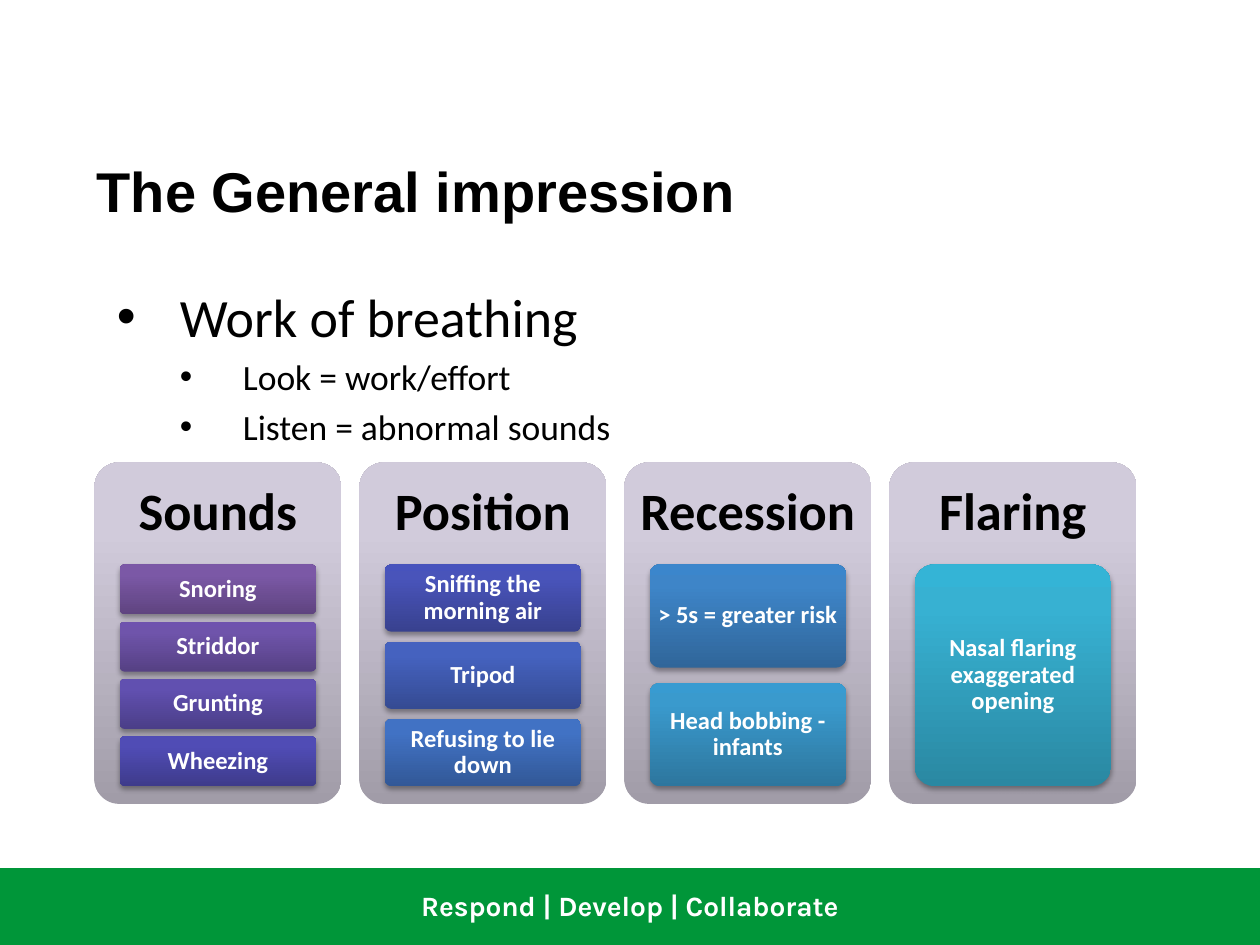
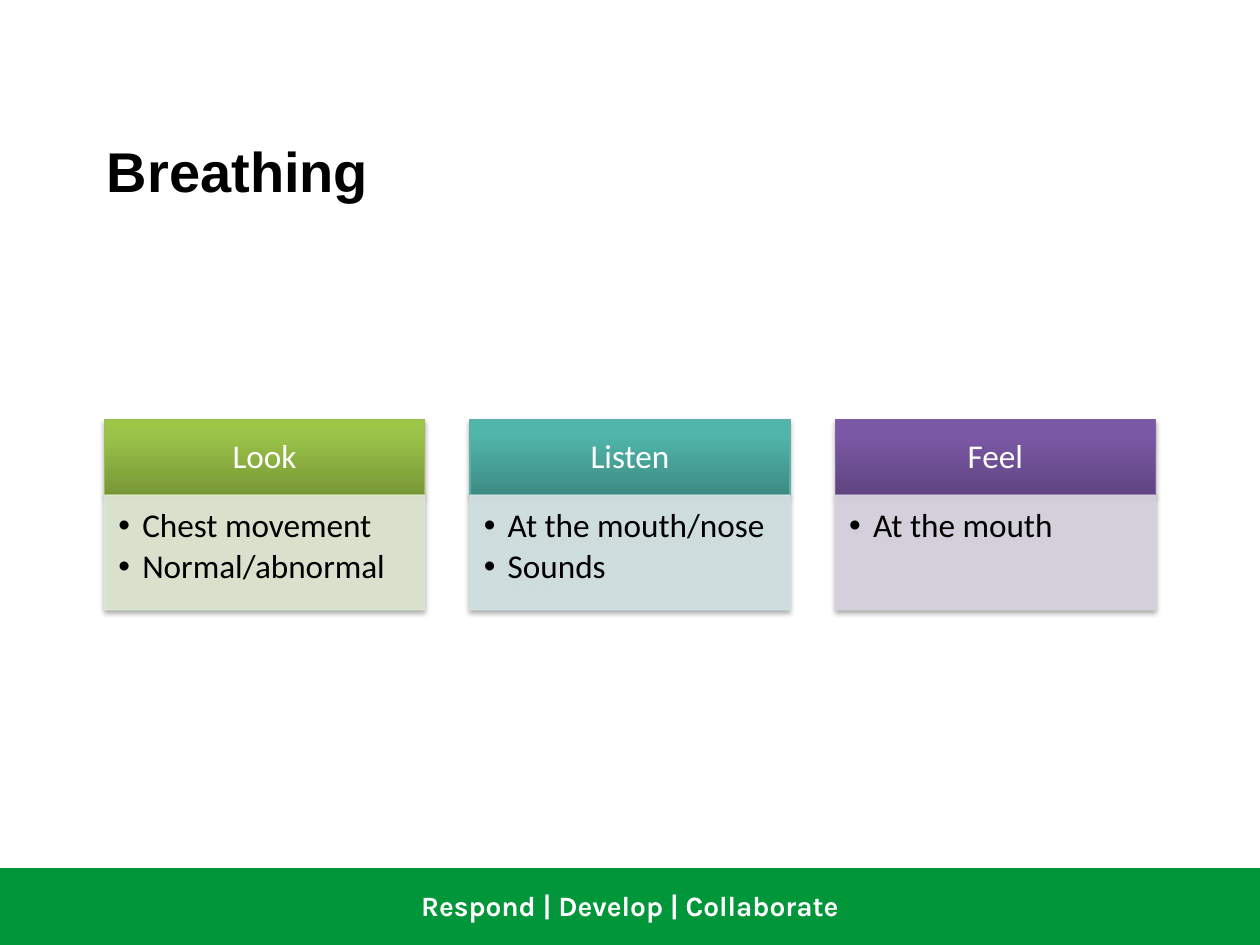
from dataclasses import dataclass
from lxml.etree import SubElement
from pptx import Presentation
from pptx.dml.color import RGBColor
from pptx.enum.shapes import MSO_SHAPE
from pptx.enum.text import MSO_ANCHOR, PP_ALIGN
from pptx.oxml.ns import qn
from pptx.util import Inches, Pt


@dataclass(frozen=True)
class Theme:
    black: str = "000000"
    white: str = "FFFFFF"
    green: str = "009639"
    card: tuple = ("A19CA8", "D1CBDB", "D2CBDC")
    title_font: str = "Arial"
    body_font: str = "Calibri"
    footer_font: str = "Karla"
    title_size: float = 32
    point_size: float = 30.8
    subpoint_size: float = 20.3
    card_size: float = 30
    tile_size: float = 14
    panel_size: float = 19
    footer_size: float = 16


THEME = Theme()

# Content
FOOTER = "Respond | Develop | Collaborate"
IMPRESSION = "The General impression"
POINTS = [
    (0, "Work of breathing"),
    (1, "Look = work/effort"),
    (1, "Listen = abnormal sounds"),
]
# Each card: heading, then its tiles with their colours from bottom to top
CARDS = [
    ("Sounds", [
        ("Snoring", ("5F4480", "7B58A6", "7C57A8")),
        ("Striddor", ("564184", "6F54AB", "6F53AE")),
        ("Grunting", ("4B3E88", "6150B0", "604FB3")),
        ("Wheezing", ("3E3B8B", "504CB5", "4F4BB8")),
    ]),
    ("Position", [
        ("Sniffing the morning air", ("38418F", "4954BA", "4753BD")),
        ("Tripod", ("354B93", "4562BF", "4361C2")),
        ("Refusing to lie down", ("325897", "4172C4", "3F72C7")),
    ]),
    ("Recession", [
        ("> 5s = greater risk", ("30669A", "3E85C8", "3B86CC")),
        ("Head bobbing - infants", ("2D769E", "3A9ACD", "389BD1")),
    ]),
    ("Flaring", [
        ("Nasal flaring exaggerated opening", ("2A88A2", "37B1D2", "34B4D6")),
    ]),
]
BREATHING = "Breathing"
# Each panel: heading, heading colours, heading edge, body colour, findings
PANELS = [
    ("Look", ("779737", "9BC348", "9DC746"), "9BBB59", "DEE7D1",
     ["Chest movement", "Normal/abnormal"]),
    ("Listen", ("3D8B83", "50B5AA", "4EB8AC"), "5EAFA6", "D2E3E2",
     ["At the mouth/nose", "Sounds"]),
    ("Feel", ("5F4480", "7B58A6", "7C57A8"), "8064A2", "D8D3E0",
     ["At the mouth"]),
]


def rgb(value):
    return RGBColor.from_string(value)


def add_box(slide, area, fill, kind=MSO_SHAPE.RECTANGLE, edge=None,
            edge_width=0.75, alpha=None, shadow=False):
    """Preset shape; a tuple as fill is a gradient from bottom to top."""
    box = slide.shapes.add_shape(kind, *map(Inches, area))
    if kind == MSO_SHAPE.ROUNDED_RECTANGLE:
        box.adjustments[0] = 0.1
    properties = box._element.spPr
    if isinstance(fill, tuple):
        box.fill.gradient()
        box.fill.gradient_angle = 90
        stops = next(properties.iter(qn("a:gsLst")))
        for stop in list(stops):
            stops.remove(stop)
        for position, color in zip((0, 80, 100), fill):
            stop = SubElement(stops, qn("a:gs"), pos=str(position * 1000))
            SubElement(stop, qn("a:srgbClr"), val=color)
    else:
        box.fill.solid()
        box.fill.fore_color.rgb = rgb(fill)
    if edge:
        box.line.color.rgb = rgb(edge)
        box.line.width = Pt(edge_width)
    else:
        box.line.fill.background()
    if alpha:
        for color in list(properties.iter(qn("a:srgbClr"))):
            SubElement(color, qn("a:alpha"), val=str(alpha * 1000))
    box.shadow.inherit = False
    if shadow:
        outer = SubElement(properties.find(qn("a:effectLst")), qn("a:outerShdw"),
                           blurRad=str(Pt(3.1)), dist=str(Pt(1.8)),
                           dir="5400000", rotWithShape="0")
        color = SubElement(outer, qn("a:srgbClr"), val=THEME.black)
        SubElement(color, qn("a:alpha"), val="35000")
    return box


def add_text_area(slide, area):
    return slide.shapes.add_textbox(*map(Inches, area))


def write(holder, lines, size, color=THEME.black, font=THEME.body_font, bold=False,
          align=PP_ALIGN.LEFT, anchor=MSO_ANCHOR.TOP,
          insets=(0.1, 0.05, 0.1, 0.05), spacing=None):
    """Fill a shape with one paragraph a line and return the paragraphs."""
    frame = holder.text_frame
    frame.word_wrap = True
    frame.vertical_anchor = anchor
    (frame.margin_left, frame.margin_top,
     frame.margin_right, frame.margin_bottom) = map(Inches, insets)
    frame.text = "\n".join(lines)
    for paragraph in frame.paragraphs:
        paragraph.alignment = align
        paragraph.line_spacing = spacing
        for run in paragraph.runs:
            run.font.size = Pt(size)
            run.font.name = font
            run.font.bold = bold
            run.font.color.rgb = rgb(color)
    return frame.paragraphs


def add_bullet(paragraph, left, hanging):
    properties = paragraph._p.get_or_add_pPr()
    properties.set("marL", str(Inches(left)))
    properties.set("indent", str(-Inches(hanging)))
    SubElement(properties, qn("a:buFont"), typeface="Arial")
    SubElement(properties, qn("a:buChar"), char="•")


def start_slide(deck, title, title_area):
    """Blank slide with the shared footer band and title style."""
    slide = deck.slides.add_slide(deck.slide_layouts[6])
    add_box(slide, (0, 6.9, 10, 0.6), THEME.green, edge=THEME.green, edge_width=2)
    write(add_text_area(slide, (0, 7, 10, 0.37)), [FOOTER], THEME.footer_size,
          THEME.white, THEME.footer_font, bold=True, align=PP_ALIGN.CENTER)
    write(add_text_area(slide, title_area), [title], THEME.title_size,
          font=THEME.title_font, bold=True, insets=(0.1, 0.09, 0.1, 0.05))
    return slide


def add_points(slide):
    area = add_text_area(slide, (0.83, 2.18, 8.36, 1.18))
    paragraphs = write(area, [text for _, text in POINTS], THEME.point_size,
                       insets=(0.1, 0.07, 0.1, 0.05))
    for index, (paragraph, (level, _)) in enumerate(zip(paragraphs, POINTS)):
        size = THEME.subpoint_size if level else THEME.point_size
        paragraph.level = level
        if index:
            paragraph.space_before = Pt(round(size * 0.2, 1))
        add_bullet(paragraph, 0.5 * (level + 1), 0.5)
        paragraph.runs[0].font.size = Pt(size)


def add_cards(slide):
    left, top, width, height, pitch = 0.75, 3.67, 1.96, 2.71, 2.103
    heading_height, tile_width, stack_height, gap_share = 0.81, 1.56, 1.76, 0.15
    centered = dict(bold=True, align=PP_ALIGN.CENTER,
                    anchor=MSO_ANCHOR.MIDDLE, spacing=0.9)
    for column, (heading, tiles) in enumerate(CARDS):
        card_left = left + column * pitch
        add_box(slide, (card_left, top, width, height), THEME.card,
                MSO_SHAPE.ROUNDED_RECTANGLE)
        heading_area = add_text_area(slide, (card_left, top, width, heading_height))
        write(heading_area, [heading], THEME.card_size, insets=(0.12,) * 4, **centered)

        # Tiles share the stack height, with gaps in proportion to the tiles
        count = len(tiles)
        tile_height = stack_height / (count + gap_share * (count - 1))
        tile_left = card_left + (width - tile_width) / 2
        for row, (text, colors) in enumerate(tiles):
            tile_top = top + heading_height + row * tile_height * (1 + gap_share)
            tile = add_box(slide, (tile_left, tile_top, tile_width, tile_height),
                           colors, MSO_SHAPE.ROUNDED_RECTANGLE, shadow=True)
            write(tile, [text], THEME.tile_size, THEME.white,
                  insets=(0.04, 0.03, 0.04, 0.03), **centered)


def add_panels(slide):
    left, top, width, pitch = 0.83, 3.33, 2.54, 2.9
    heading_height, body_height = 0.6, 0.91
    for column, (heading, colors, edge, tint, findings) in enumerate(PANELS):
        panel_left = left + column * pitch
        header = add_box(slide, (panel_left, top, width, heading_height),
                         colors, edge=edge, shadow=True)
        write(header, [heading], THEME.panel_size, THEME.white,
              align=PP_ALIGN.CENTER, anchor=MSO_ANCHOR.MIDDLE,
              insets=(0.15, 0.08, 0.15, 0.08), spacing=0.9)
        body = add_box(slide, (panel_left, top + heading_height, width, body_height),
                       tint, edge=tint, alpha=90, shadow=True)
        for paragraph in write(body, findings, THEME.panel_size, spacing=0.9,
                               insets=(0.11, 0.11, 0.15, 0.17)):
            paragraph.space_after = Pt(2.85)
            add_bullet(paragraph, 0.19, 0.19)


def main():
    deck = Presentation()
    deck.slide_width, deck.slide_height = Inches(10), Inches(7.5)

    # General impression
    impression = start_slide(deck, IMPRESSION, (0.67, 1.15, 8.13, 0.94))
    add_points(impression)
    add_cards(impression)

    # Breathing
    breathing = start_slide(deck, BREATHING, (0.75, 0.99, 9.13, 1.25))
    add_panels(breathing)

    deck.save("out.pptx")


if __name__ == "__main__":
    main()
